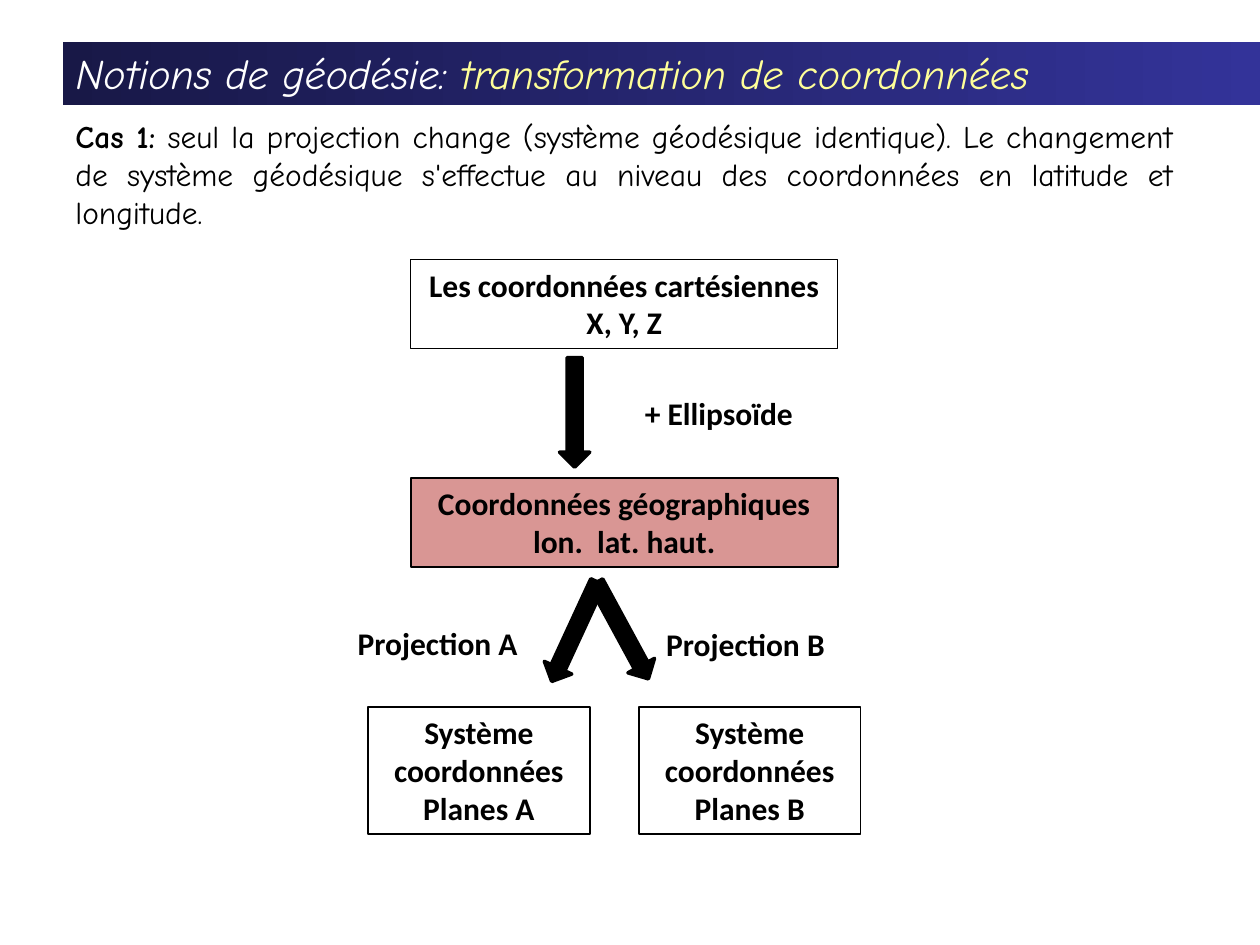
from pptx import Presentation
from pptx.dml.color import RGBColor
from pptx.enum.shapes import MSO_SHAPE
from pptx.enum.text import MSO_ANCHOR, MSO_AUTO_SIZE, PP_ALIGN
from pptx.util import Cm, Pt

RECT, ARROW = MSO_SHAPE.RECTANGLE, MSO_SHAPE.DOWN_ARROW
LEFT, MID, JUST = PP_ALIGN.LEFT, PP_ALIGN.CENTER, PP_ALIGN.JUSTIFY
TOP, CENTER = MSO_ANCHOR.TOP, MSO_ANCHOR.MIDDLE
NONE = MSO_AUTO_SIZE.NONE

HUES = {"ink": "000000", "white": "FFFFFF", "yellow": "FFFF99",
        "rose": "D99694", "night": "181847", "blue": "333399"}
HAND, SANS = "Comic Neue", "Calibri"

# Content: runs are (text, colour, bold, italic)
TITLE = [("Notions de géodésie: ", "white", False, True),
         ("transformation de coordonnées", "yellow", False, True)]
INTRO = [("Cas 1:", "ink", True, False),
         (" seul la projection change (système géodésique identique). "
          "Le changement de système géodésique s'effectue au niveau des "
          "coordonnées en latitude et longitude.", "ink", False, False)]

# Boxes: lines, left, top, size, fill, line width
WIDE, SMALL = (8.61, 1.8), (4.47, 2.57)
BOXES = [
    (["Les coordonnées cartésiennes X, Y, Z"], 8.28, 5.23, WIDE, None, 0.75),
    (["Coordonnées géographiques lon.  lat. haut."], 8.28, 9.63, WIDE, "rose", 1),
    (["Système coordonnées", "Planes A"], 7.42, 14.25, SMALL, None, 1),
    (["Système coordonnées", "Planes B"], 12.88, 14.25, SMALL, None, 1),
]
# Labels: text, left, top
LABELS = [("+ Ellipsoïde", 12.75, 7.82),
          ("Projection A", 6.96, 12.45),
          ("Projection B", 13.18, 12.47)]
# Arrows: left, top, turn
ARROWS = [(11.28, 7.21, 0), (11.28, 11.63, 24.8), (12.24, 11.61, 331.5)]


def hue(name):
    return RGBColor.from_string(HUES[name])


def write(shape, paras, font, size, align, anchor=TOP):
    frame = shape.text_frame
    frame.word_wrap = True
    frame.auto_size = NONE
    frame.vertical_anchor = anchor
    for i, runs in enumerate(paras):
        para = frame.add_paragraph() if i else frame.paragraphs[0]
        para.alignment = align
        para.space_before = Pt(0)
        for text, color, bold, slant in runs:
            run = para.add_run()
            run.text = text
            face = run.font
            face.name, face.size = font, Pt(size)
            face.bold, face.italic = bold, slant
            face.color.rgb = hue(color)


def strong(lines):
    return [[(line, "ink", True, False)] for line in lines]


def draw(kind, left, top, size, fill, weight):
    shape = slide.shapes.add_shape(kind, Cm(left), Cm(top), *map(Cm, size))
    shape.shadow.inherit = False
    if fill:
        shape.fill.solid()
        shape.fill.fore_color.rgb = hue(fill)
    else:
        shape.fill.background()
    shape.line.color.rgb = hue("ink")
    shape.line.width = Pt(weight)
    return shape


def textbox(left, top, wide, high):
    return slide.shapes.add_textbox(Cm(left), Cm(top), Cm(wide), Cm(high))


deck = Presentation()
deck.slide_width, deck.slide_height = Cm(25.4), Cm(19.05)
slide = deck.slides.add_slide(deck.slide_layouts[5])

# Title band
title = slide.shapes.title
title.left, title.top = Cm(1.27), Cm(0.84)
title.width, title.height = Cm(24.13), Cm(1.27)
title.fill.gradient()
title.fill.gradient_angle = 0
for stop, name, spot in zip(title.fill.gradient_stops, ("night", "blue"), (0, 1)):
    stop.color.rgb = hue(name)
    stop.position = spot
write(title, [TITLE], HAND, 24, LEFT, CENTER)

# Introduction
write(textbox(1.27, 2.24, 22.63, 2.57), [INTRO], HAND, 18, JUST)

# Flow chart
for lines, left, top, size, fill, weight in BOXES:
    box = draw(RECT, left, top, size, fill, weight)
    write(box, strong(lines), SANS, 18, MID)
for text, left, top in LABELS:
    write(textbox(left, top, 3.91, 1.02), strong([text]), SANS, 18, LEFT)
for left, top, turn in ARROWS:
    draw(ARROW, left, top, (0.61, 2.21), "ink", 2).rotation = turn

deck.save("out.pptx")
